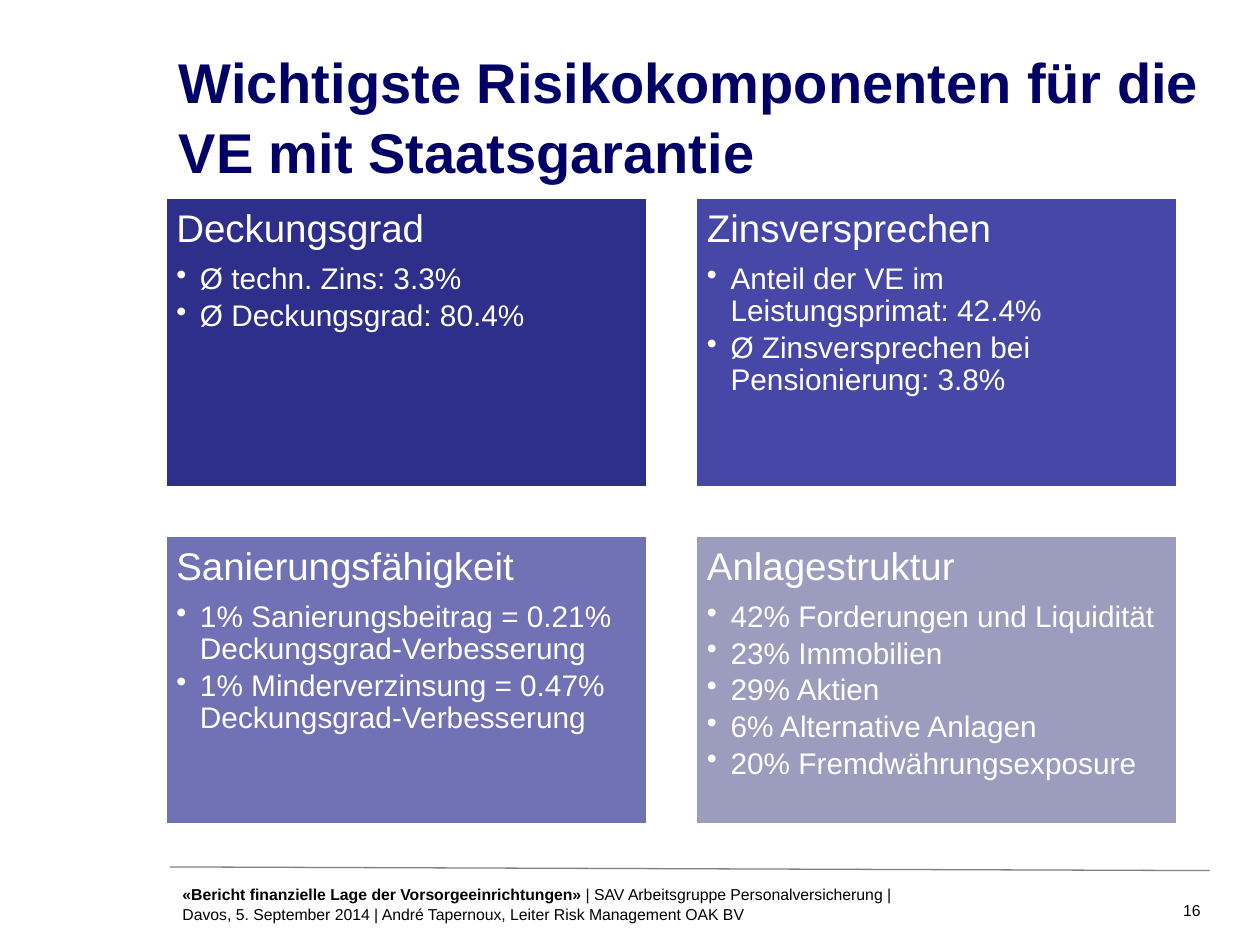
from lxml import etree
from pptx import Presentation
from pptx.dml.color import RGBColor
from pptx.enum.shapes import MSO_CONNECTOR, MSO_SHAPE
from pptx.enum.text import MSO_ANCHOR, PP_ALIGN
from pptx.oxml.ns import qn
from pptx.util import Pt

LEFT, RIGHT = PP_ALIGN.LEFT, PP_ALIGN.RIGHT
TOP = MSO_ANCHOR.TOP
RECTANGLE, STRAIGHT = MSO_SHAPE.RECTANGLE, MSO_CONNECTOR.STRAIGHT

# Content
TITLE = "Wichtigste Risikokomponenten für die VE mit Staatsgarantie"
CARDS = [
    ("Deckungsgrad", "2E2E8B",
     ["Ø techn. Zins: 3.3%", "Ø Deckungsgrad: 80.4%"]),
    ("Zinsversprechen", "4747A8",
     ["Anteil der VE im Leistungsprimat: 42.4%",
      "Ø Zinsversprechen bei Pensionierung: 3.8%"]),
    ("Sanierungsfähigkeit", "7171B5",
     ["1% Sanierungsbeitrag = 0.21% Deckungsgrad-Verbesserung",
      "1% Minderverzinsung = 0.47% Deckungsgrad-Verbesserung"]),
    ("Anlagestruktur", "9C9CBF",
     ["42% Forderungen und Liquidität", "23% Immobilien", "29% Aktien",
      "6% Alternative Anlagen", "20% Fremdwährungsexposure"]),
]
FOOTER_TITLE = "«Bericht finanzielle Lage der Vorsorgeeinrichtungen» "
FOOTER_DETAILS = ("| SAV Arbeitsgruppe Personalversicherung | Davos, 5. September 2014 "
                  "| André Tapernoux, Leiter Risk Management OAK BV")
PAGE_NUMBER = "16"

THEME = {
    "font": "Arial",
    "title": "000066", "card_text": "FFFFFF", "footer": "000000", "rule": "808080",
    "title_size": 32, "heading_size": 22, "bullet_size": 17, "footer_size": 9,
}

# Card grid, in points
COLUMNS = 2
GRID_LEFT, GRID_TOP = 94.3, 113
CARD_WIDTH, CARD_HEIGHT = 275.8, 165.6
COLUMN_GAP, ROW_GAP = 27.4, 27.4
CARD_INSET = 6.5
BULLET_INDENT = 13.5


def color(name):
    return RGBColor.from_string(THEME.get(name, name))


def add_text(paragraph, text, *, size, fill, bold=False):
    """Append one formatted run to a paragraph."""
    run = paragraph.add_run()
    run.text = text
    run.font.name = THEME["font"]
    run.font.size = Pt(THEME[size])
    run.font.bold = bold
    run.font.color.rgb = color(fill)


def prepare_frame(shape, horizontal=0, vertical=0):
    frame = shape.text_frame
    frame.word_wrap = True
    frame.vertical_anchor = TOP
    frame.margin_left = frame.margin_right = Pt(horizontal)
    frame.margin_top = frame.margin_bottom = Pt(vertical)
    return frame


def set_spacing(paragraph, line, after=0, align=LEFT):
    paragraph.alignment = align
    paragraph.line_spacing = line
    paragraph.space_after = Pt(after)


def add_bullet(paragraph):
    properties = paragraph._p.get_or_add_pPr()
    properties.set("marL", str(Pt(BULLET_INDENT)))
    properties.set("indent", str(-Pt(BULLET_INDENT)))
    etree.SubElement(properties, qn("a:buChar")).set("char", "•")


def add_box(slide, left, top, width, height, *, inset=(0, 0), align=LEFT):
    """Add a text box and return its first paragraph."""
    box = slide.shapes.add_textbox(Pt(left), Pt(top), Pt(width), Pt(height))
    paragraph = prepare_frame(box, *inset).paragraphs[0]
    set_spacing(paragraph, 1.05, align=align)
    return paragraph


def add_card(slide, index, heading, fill, bullets):
    row, column = divmod(index, COLUMNS)
    card = slide.shapes.add_shape(
        RECTANGLE,
        Pt(GRID_LEFT + column * (CARD_WIDTH + COLUMN_GAP)),
        Pt(GRID_TOP + row * (CARD_HEIGHT + ROW_GAP)),
        Pt(CARD_WIDTH), Pt(CARD_HEIGHT))
    card.shadow.inherit = False
    card.fill.solid()
    card.fill.fore_color.rgb = color(fill)
    card.line.color.rgb = color("card_text")
    card.line.width = Pt(2)
    frame = prepare_frame(card, CARD_INSET, CARD_INSET)
    paragraph = frame.paragraphs[0]
    set_spacing(paragraph, 0.9, after=7.7)
    add_text(paragraph, heading, size="heading_size", fill="card_text")
    for bullet in bullets:
        paragraph = frame.add_paragraph()
        add_bullet(paragraph)
        set_spacing(paragraph, 0.9, after=2.55)
        add_text(paragraph, bullet, size="bullet_size", fill="card_text")


def main():
    presentation = Presentation()
    presentation.slide_width, presentation.slide_height = Pt(720), Pt(540)
    slide = presentation.slides.add_slide(presentation.slide_layouts[6])

    # Title
    title = add_box(slide, 102.2, 25.2, 587.5, 77.8)
    add_text(title, TITLE, size="title_size", fill="title", bold=True)

    # Risk cards
    for index, card in enumerate(CARDS):
        add_card(slide, index, *card)

    # Footer rule
    rule = slide.shapes.add_connector(STRAIGHT, Pt(691.2), Pt(497.5), Pt(97.2), Pt(495.4))
    rule.line.color.rgb = color("rule")
    rule.line.width = Pt(0.75)
    etree.SubElement(rule._element.spPr, qn("a:effectLst"))

    # Footer text and page number
    footer = add_box(slide, 97.2, 501.8, 434.2, 28.8, inset=(7.2, 3.6))
    add_text(footer, FOOTER_TITLE, size="footer_size", fill="footer", bold=True)
    add_text(footer, FOOTER_DETAILS, size="footer_size", fill="footer")
    number = add_box(slide, 657, 514, 29, 11.5, align=RIGHT)
    add_text(number, PAGE_NUMBER, size="footer_size", fill="footer")

    presentation.save("out.pptx")


if __name__ == "__main__":
    main()
